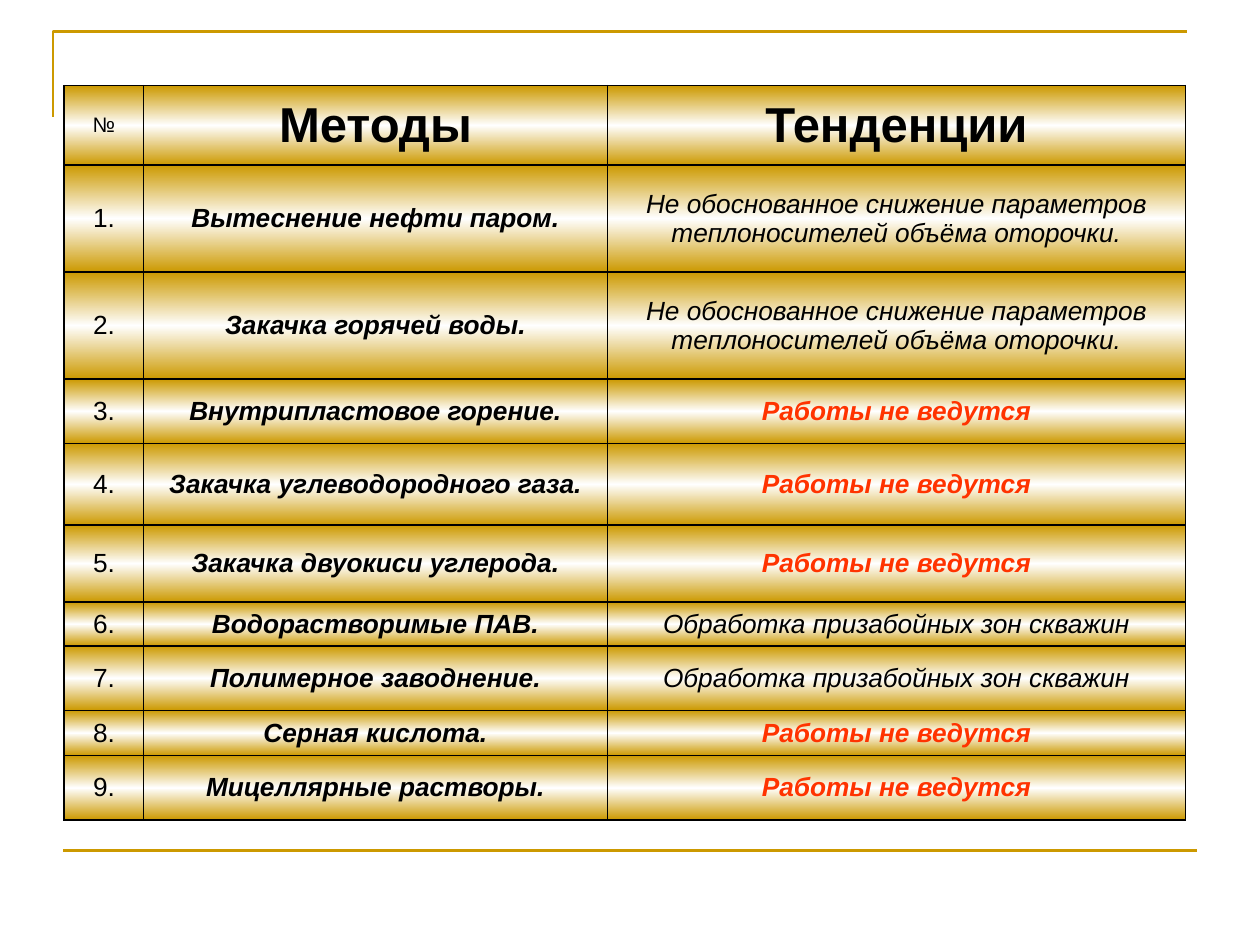
from lxml import etree
from pptx import Presentation
from pptx import util as u
from pptx.dml.color import RGBColor
from pptx.enum import shapes, text
from pptx.oxml.ns import qn

GOLD, WHITE, BLACK, RED = "CC9900", "FFFFFF", "000000", "FF3300"
COLUMNS = [0.63, 3.68, 4.59]
ROWS = [0.63, 0.85, 0.85, 0.51, 0.65, 0.61, 0.35, 0.51, 0.36, 0.51]
REDUCED = "Не обоснованное снижение параметров теплоносителей объёма оторочки."
STOPPED = "Работы не ведутся"
TREATED = "Обработка призабойных зон скважин"
HEADINGS = ["№", "Методы", "Тенденции"]
METHODS = [
    ("Вытеснение нефти паром.", REDUCED),
    ("Закачка горячей воды.", REDUCED),
    ("Внутрипластовое горение.", STOPPED),
    ("Закачка углеводородного газа.", STOPPED),
    ("Закачка двуокиси углерода.", STOPPED),
    ("Водорастворимые ПАВ.", TREATED),
    ("Полимерное заводнение.", TREATED),
    ("Серная кислота.", STOPPED),
    ("Мицеллярные растворы.", STOPPED),
]


def color(value):
    return RGBColor.from_string(value)


def add_element(parent, tag, **attributes):
    return etree.SubElement(parent, qn(tag), attributes)


def add_color(parent, value):
    add_element(parent, "a:srgbClr", val=value)


def format_line(shape):
    shape.line.color.rgb = color(GOLD)
    shape.line.width = u.Pt(1.5)


def add_frame(slide, left, top, width, height):
    corner = slide.shapes.build_freeform(left, top + height)
    corner.add_line_segments([(left, top), (left + width, top)], close=False)
    shape = corner.convert_to_shape()
    shape.shadow.inherit = False
    shape.fill.background()
    format_line(shape)


def add_rule(slide, left, top, width):
    rule = slide.shapes.add_connector(
        shapes.MSO_CONNECTOR.STRAIGHT, left, top, left + width, top)
    format_line(rule)
    add_element(rule.element.spPr, "a:effectLst")


def paint_cell(cell):
    properties = cell._tc.get_or_add_tcPr()
    for side in "LRTB":
        border = add_element(properties, f"a:ln{side}", w=str(u.Pt(1)))
        add_color(add_element(border, "a:solidFill"), BLACK)
    gradient = add_element(properties, "a:gradFill", rotWithShape="1")
    stops = add_element(gradient, "a:gsLst")
    for share, value in [(0, GOLD), (50, WHITE), (100, GOLD)]:
        add_color(add_element(stops, "a:gs", pos=str(share * 1000)), value)
    add_element(gradient, "a:lin", ang="5400000", scaled="0")


def fill_cell(cell, words, size, bold=False, italic=False, ink=BLACK):
    cell.margin_left = cell.margin_right = u.Inches(0.02)
    cell.margin_top = cell.margin_bottom = 0
    cell.vertical_anchor = text.MSO_ANCHOR.MIDDLE
    paragraph = cell.text_frame.paragraphs[0]
    paragraph.alignment = text.PP_ALIGN.CENTER
    run = paragraph.add_run()
    run.text = words
    font = run.font
    font.name = "Arial"
    font.size = u.Pt(size)
    font.bold = bold
    font.italic = italic
    font.color.rgb = color(ink)
    paint_cell(cell)


def add_methods_table(slide, left, top, width, height):
    table = slide.shapes.add_table(
        len(ROWS), len(COLUMNS), left, top, width, height).table
    table.first_row = table.horz_banding = False
    for column, share in zip(table.columns, COLUMNS):
        column.width = int(width * share / sum(COLUMNS))
    for row, share in zip(table.rows, ROWS):
        row.height = int(height * share / sum(ROWS))
    for index, heading in enumerate(HEADINGS):
        fill_cell(table.cell(0, index), heading,
                  size=28 if index else 12, bold=index > 0)
    for number, (method, trend) in enumerate(METHODS, 1):
        stopped = trend == STOPPED
        fill_cell(table.cell(number, 0), f"{number}.", 15)
        fill_cell(table.cell(number, 1), method, 15, bold=True, italic=True)
        fill_cell(table.cell(number, 2), trend, 15, bold=stopped,
                  italic=True, ink=RED if stopped else BLACK)


def main():
    presentation = Presentation()
    presentation.slide_width = width = u.Inches(10)
    presentation.slide_height = height = u.Inches(7.5)
    slide = presentation.slides.add_slide(presentation.slide_layouts[6])
    add_frame(slide, int(width * 0.042), height // 30,
              int(width * 0.9), int(height * 0.09))
    add_rule(slide, int(width * 0.05), int(height * 0.9), int(width * 0.9))
    add_methods_table(slide, u.Inches(0.51), u.Inches(0.68),
                      u.Inches(sum(COLUMNS)), u.Inches(sum(ROWS)))
    presentation.save("out.pptx")


if __name__ == "__main__":
    main()
